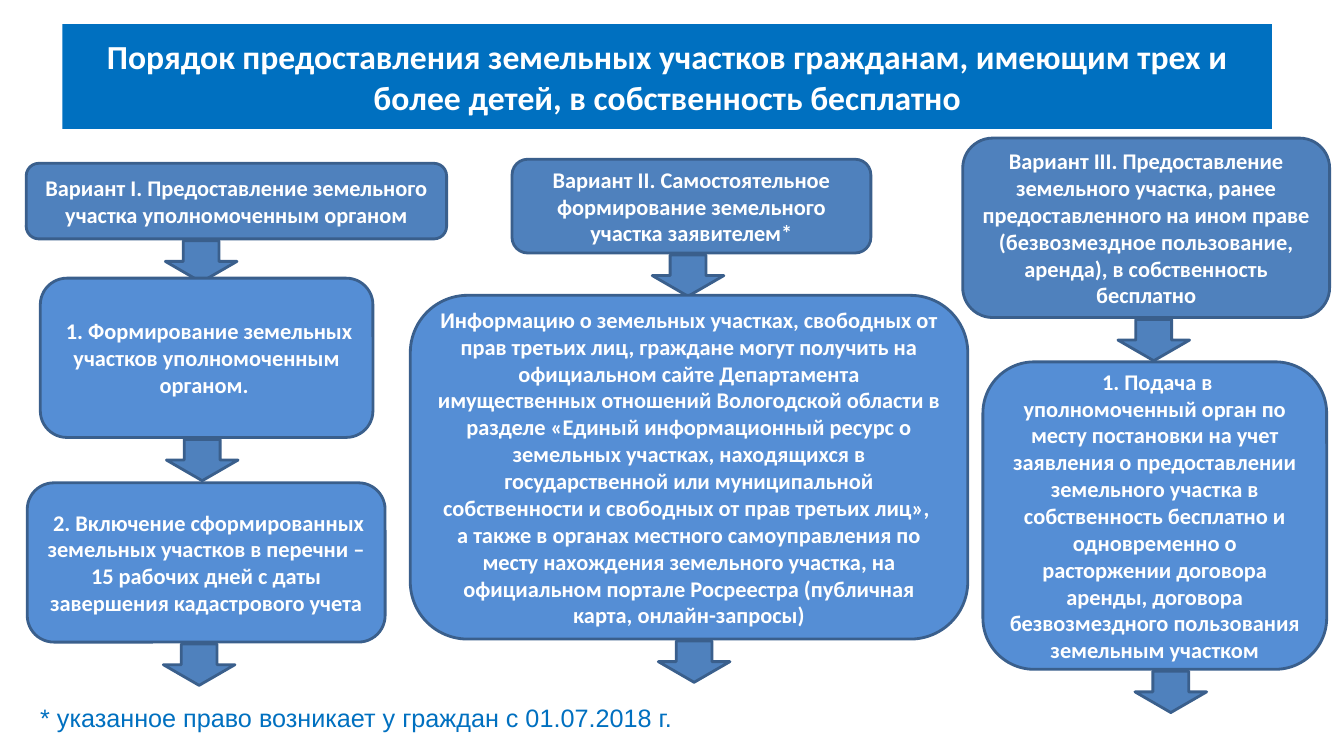
from pptx import Presentation
from pptx.dml.color import RGBColor
from pptx.enum.shapes import MSO_SHAPE as Shape
from pptx.enum.text import MSO_ANCHOR as Anchor, PP_ALIGN as Align
from pptx.util import Inches, Pt

WIDTH, HEIGHT = Inches(13.33), Inches(7.5)
TITLE_BLUE = RGBColor(0x00, 0x70, 0xC0)
OPTION_BLUE = RGBColor(0x4F, 0x81, 0xBD)
STEP_BLUE = RGBColor(0x55, 0x8E, 0xD5)
OUTLINE_BLUE = RGBColor(0x3A, 0x5F, 0x8C)
WHITE = RGBColor(0xFF, 0xFF, 0xFF)

ARROW_WIDTH, ARROW_HEIGHT, ARROW_GAP = 5.33, 5.47, 0.25

TITLE = ("Порядок предоставления земельных участков гражданам, имеющим трех и "
         "более детей, в собственность бесплатно")
FOOTNOTE = "* указанное право возникает у граждан с 01.07.2018 г."

# Each block: area in percent of the slide, left edge of the arrow below, fill, paragraphs.
BLOCKS = [
    ((1.95, 21.6, 31.28, 10), 12.3, OPTION_BLUE,
     ["Вариант I. Предоставление земельного участка уполномоченным органом"]),
    ((3, 36.8, 24.75, 21.07), 12.38, STEP_BLUE,
     [" 1. Формирование земельных участков уполномоченным органом. "]),
    ((2.03, 63.87, 26.63, 21.07), 12.15, STEP_BLUE,
     [" 2. Включение сформированных земельных участков в перечни – "
      "15 рабочих дней с даты завершения кадастрового учета"]),
    ((38.1, 21.07, 26.7, 12.4), 48.53, OPTION_BLUE,
     ["Вариант II. Самостоятельное формирование земельного участка заявителем*"]),
    ((30.53, 39.07, 41.48, 45.47), 48.98, STEP_BLUE,
     ["Информацию о земельных участках, свободных от прав третьих лиц, граждане "
      "могут получить на официальном сайте Департамента имущественных отношений "
      "Вологодской области в разделе «Единый информационный ресурс о земельных "
      "участках, находящихся в государственной или муниципальной собственности и "
      "свободных от прав третьих лиц», ",
      "а также в органах местного самоуправления по месту нахождения земельного "
      "участка, на официальном портале Росреестра (публичная карта, онлайн-запросы)"]),
    ((71.63, 18.27, 27.3, 23.73), 83.18, OPTION_BLUE,
     ["Вариант III. Предоставление земельного участка, ранее предоставленного на "
      "ином праве (безвозмездное пользование, аренда), в собственность бесплатно"]),
    ((73.13, 47.87, 25.58, 40.67), 84.45, STEP_BLUE,
     [" 1. Подача в уполномоченный орган по месту постановки на учет заявления о "
      "предоставлении земельного участка в собственность бесплатно и одновременно "
      "о расторжении договора аренды, договора безвозмездного пользования "
      "земельным участком"]),
]


def place(area):
    """Turn an area in percent of the slide into lengths."""
    left, top, width, height = area
    return (round(WIDTH * left / 100), round(HEIGHT * top / 100),
            round(WIDTH * width / 100), round(HEIGHT * height / 100))


def write(frame, paragraphs, size, color, font="Calibri", bold=True, align=Align.CENTER):
    """Fill a text frame with evenly formatted paragraphs."""
    frame.word_wrap = True
    frame.text = "\n".join(paragraphs)
    for paragraph in frame.paragraphs:
        paragraph.alignment = align
        paragraph.font.name = font
        paragraph.font.size = Pt(size)
        paragraph.font.bold = bold
        paragraph.font.color.rgb = color


def add_figure(slide, kind, area, fill, outline=OUTLINE_BLUE):
    """Add a flat filled shape, outlined unless outline is None."""
    figure = slide.shapes.add_shape(kind, *place(area))
    figure.shadow.inherit = False
    figure.fill.solid()
    figure.fill.fore_color.rgb = fill
    if outline is None:
        figure.line.fill.background()
    else:
        figure.line.color.rgb = outline
        figure.line.width = Pt(2)
    return figure


def add_block(slide, area, arrow_left, fill, paragraphs):
    """Add a rounded block and the arrow leading down from it."""
    block = add_figure(slide, Shape.ROUNDED_RECTANGLE, area, fill)
    block.text_frame.vertical_anchor = Anchor.MIDDLE
    write(block.text_frame, paragraphs, 16, WHITE)
    arrow_top = area[1] + area[3] + ARROW_GAP
    add_figure(slide, Shape.DOWN_ARROW,
               (arrow_left, arrow_top, ARROW_WIDTH, ARROW_HEIGHT), OPTION_BLUE)


def main():
    """Build the slide and save it."""
    deck = Presentation()
    deck.slide_width, deck.slide_height = WIDTH, HEIGHT
    slide = deck.slides.add_slide(deck.slide_layouts[6])

    banner = add_figure(slide, Shape.RECTANGLE, (4.65, 3.2, 90, 13.87), TITLE_BLUE, None)
    banner.text_frame.vertical_anchor = Anchor.MIDDLE
    write(banner.text_frame, [TITLE], 24, WHITE)

    for block in BLOCKS:
        add_block(slide, *block)

    footnote = slide.shapes.add_textbox(*place((2.25, 92.27, 86.93, 5.33)))
    write(footnote.text_frame, [FOOTNOTE], 18, TITLE_BLUE, "Arial", False, Align.LEFT)

    deck.save("out.pptx")


if __name__ == "__main__":
    main()
